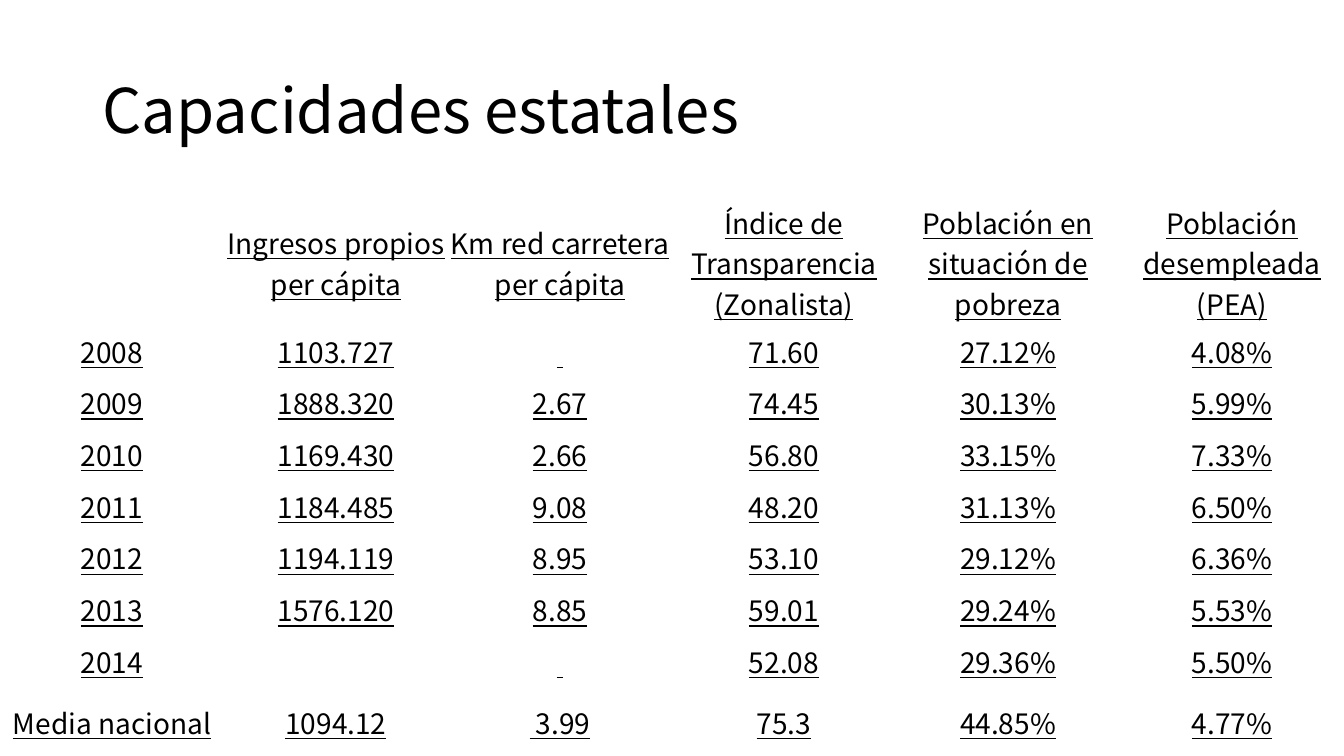
from lxml.etree import SubElement
from pptx import Presentation
from pptx.dml.color import RGBColor
from pptx.enum.text import MSO_ANCHOR, PP_ALIGN
from pptx.oxml.ns import qn
from pptx.util import Inches, Pt

FONT = "Noto Sans CJK SC"
BLACK = "000000"
WHITE = "FFFFFF"
WIDTH = 13.33
TOP = 1.98
HEAD = 1.24
YEAR = 0.513
MEAN = 0.69

ROWS = [
    ["", "Ingresos propios per cápita", "Km red carretera per cápita",
     "Índice de Transparencia (Zonalista)", "Población en situación de pobreza",
     "Población desempleada (PEA)"],
    ["2008", "1103.727", " ", "71.60", "27.12%", "4.08%"],
    ["2009", "1888.320", "2.67", "74.45", "30.13%", "5.99%"],
    ["2010", "1169.430", "2.66", "56.80", "33.15%", "7.33%"],
    ["2011", "1184.485", "9.08", "48.20", "31.13%", "6.50%"],
    ["2012", "1194.119", "8.95", "53.10", "29.12%", "6.36%"],
    ["2013", "1576.120", "8.85", "59.01", "29.24%", "5.53%"],
    ["2014", "", " ", "52.08", "29.36%", "5.50%"],
    ["Media nacional", "1094.12", " 3.99", "75.3", "44.85%", "4.77%"],
]


def color(value):
    return RGBColor.from_string(value)


def style(para, size, under=False):
    for run in para.runs:
        run.font.name = FONT
        run.font.size = Pt(size)
        run.font.underline = under
        run.font.color.rgb = color(BLACK)


def add_title(slide, text):
    box = slide.shapes.add_textbox(
        Inches(0.92), Inches(0.4), Inches(11.5), Inches(1.45))
    frame = box.text_frame
    frame.word_wrap = True
    frame.vertical_anchor = MSO_ANCHOR.MIDDLE
    frame.text = text
    para = frame.paragraphs[0]
    para.line_spacing = 0.9
    style(para, 44)


def add_edges(cell):
    props = cell._tc.get_or_add_tcPr()
    for side in ("a:lnL", "a:lnR", "a:lnT", "a:lnB"):
        line = SubElement(props, qn(side), w=str(Pt(1)))
        fill = SubElement(line, qn("a:solidFill"))
        SubElement(fill, qn("a:srgbClr"), val=WHITE)


def fill_cell(cell, text):
    add_edges(cell)
    cell.fill.solid()
    cell.fill.fore_color.rgb = color(WHITE)
    cell.vertical_anchor = MSO_ANCHOR.MIDDLE
    cell.margin_left = cell.margin_right = cell.margin_top = Inches(0.01)
    cell.margin_bottom = Inches(0)
    if text:
        cell.text_frame.text = text
        para = cell.text_frame.paragraphs[0]
        para.alignment = PP_ALIGN.CENTER
        style(para, 20, under=True)


def add_grid(slide, rows):
    count = len(rows[0])
    tall = [HEAD] + [YEAR] * (len(rows) - 2) + [MEAN]
    table = slide.shapes.add_table(
        len(rows), count, Inches(0), Inches(TOP),
        Inches(WIDTH), Inches(sum(tall))).table
    table.first_row = False
    table.horz_banding = False
    for column in table.columns:
        column.width = Inches(WIDTH / count)
    for row, height, texts in zip(table.rows, tall, rows):
        row.height = Inches(height)
        for cell, text in zip(row.cells, texts):
            fill_cell(cell, text)


def main():
    deck = Presentation()
    deck.slide_width = Inches(WIDTH)
    deck.slide_height = Inches(7.5)
    slide = deck.slides.add_slide(deck.slide_layouts[6])
    add_title(slide, "Capacidades estatales")
    add_grid(slide, ROWS)
    deck.save("out.pptx")


if __name__ == "__main__":
    main()
